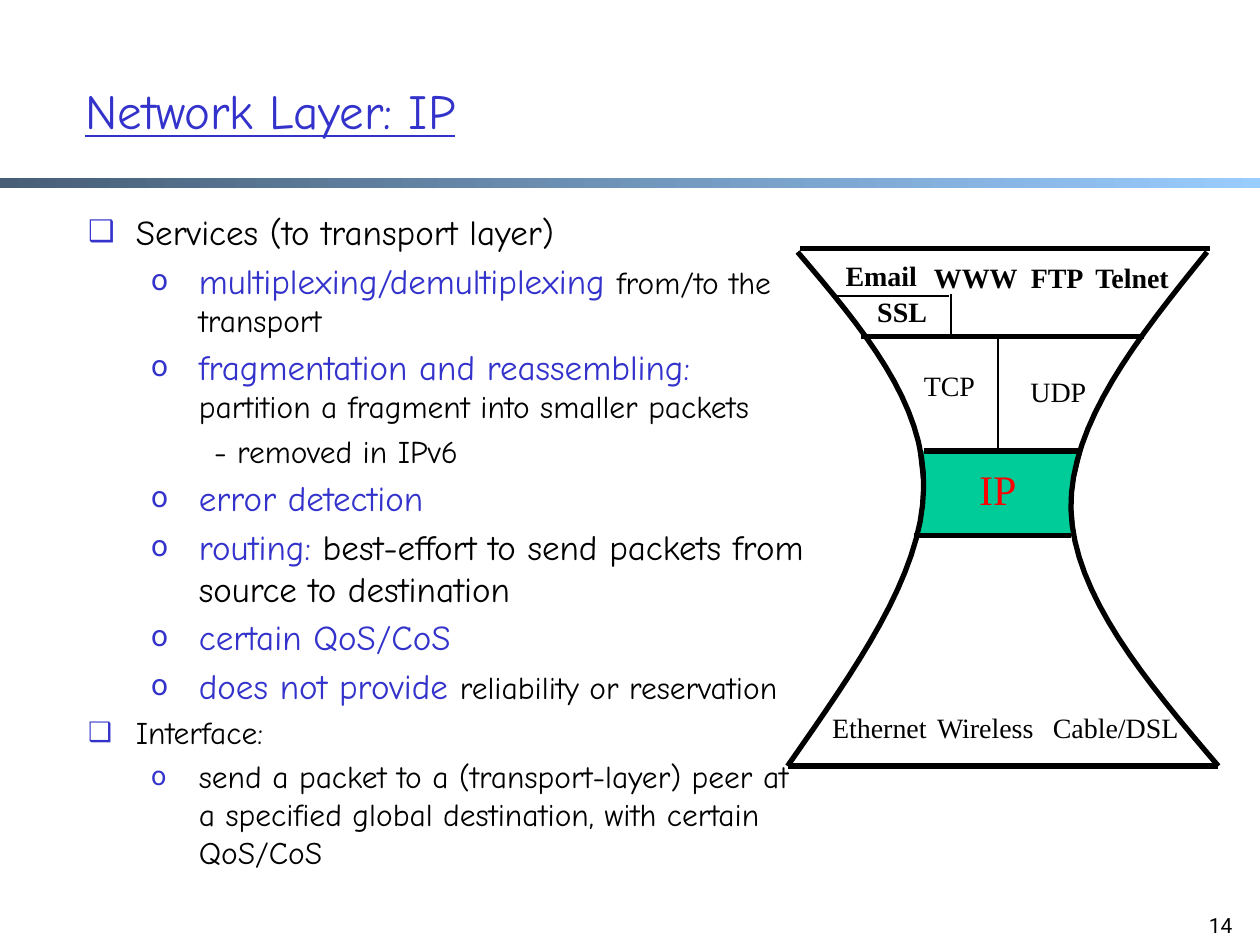
from lxml.etree import SubElement
from pptx import Presentation
from pptx.dml.color import RGBColor
from pptx.enum.shapes import MSO_CONNECTOR, MSO_SHAPE
from pptx.enum.text import MSO_ANCHOR, PP_ALIGN
from pptx.oxml.ns import qn
from pptx.util import Inches, Pt

BLACK = RGBColor(0x00, 0x00, 0x00)
BLUE = RGBColor(0x33, 0x33, 0xCC)
RED = RGBColor(0xFF, 0x00, 0x00)
GREEN = RGBColor(0x00, 0xCC, 0x99)
BAR_START = RGBColor(0x47, 0x5E, 0x76)
BAR_END = RGBColor(0x99, 0xCC, 0xFF)
BODY_FONT = "Comic Neue"
NUMBER_FONT = "Roboto"
DIAGRAM_FONT = "Times New Roman"
CURVE_STEPS = 16

INDENTS = [(0.38, -0.38), (0.88, -0.38), (1, 0)]
BULLETS = ["❑", "o", None]

OUTLINE = [
    (0, [("Services (to transport layer)", 20, BLACK)]),
    (1, [("multiplexing/demultiplexing ", 20, BLUE), ("from/to the transport", 18, BLACK)]),
    (1, [("fragmentation and reassembling: ", 20, BLUE),
         ("partition a fragment into smaller packets", 18, BLACK)]),
    (2, [("- removed in IPv6", 18, BLACK)]),
    (1, [("error detection", 20, BLUE)]),
    (1, [("routing: ", 20, BLUE),
         ("best-effort to send packets from source to destination", 20, BLACK)]),
    (1, [("certain QoS/CoS", 20, BLUE)]),
    (1, [("does not provide ", 20, BLUE), ("reliability or reservation", 18, BLACK)]),
    (0, [("Interface:", 18, BLACK)]),
    (1, [("send a packet to a (transport-layer) peer at a specified global destination, "
          "with certain QoS/CoS", 18, BLACK)]),
]

IP_BAND = [(7.29, 3.58), (7.33, 3.92), (7.29, 4.25), (8.53, 4.25), (8.5, 3.92), (8.58, 3.59)]
LEFT_CURVE = [(6.33, 2), (6.84, 2.6), (7.35, 3.2), (7.33, 3.88),
              (7.32, 4.57), (6.78, 5.32), (6.25, 6.08)]
RIGHT_CURVE = [(9.58, 2), (9.03, 2.68), (8.49, 3.36), (8.5, 4.04),
               (8.52, 4.72), (9.09, 5.4), (9.67, 6.08)]

LINES = [
    (7.33, 3.58, 8.58, 3.58, 3),
    (7.25, 4.25, 8.5, 4.25, 3),
    (6.25, 6.08, 9.67, 6.08, 3),
    (6.83, 2.67, 9.08, 2.67, 3),
    (7.92, 2.67, 7.92, 3.58, 1),
    (7.55, 2.33, 7.55, 2.68, 1),
    (6.35, 1.97, 9.6, 1.97, 3),
    (6.64, 2.35, 7.53, 2.35, 1),
]

LABELS = [
    ("Ethernet", 6.5, 5.59, 0.96, False),
    ("Cable/DSL", 8.25, 5.59, 1.21, False),
    ("Wireless", 7.33, 5.59, 0.98, False),
    ("TCP", 7.23, 2.88, 0.61, False),
    ("UDP", 8.08, 2.92, 0.64, False),
    ("SSL", 6.86, 2.29, 0.6, True),
    ("Telnet", 8.58, 2.02, 0.81, True),
    ("Email", 6.61, 2, 0.77, True),
    ("FTP", 8.08, 2.02, 0.62, True),
    ("WWW", 7.31, 2.02, 0.87, True),
]


def add_text_box(slide, left, top, width, height, wrap=True):
    box = slide.shapes.add_textbox(Inches(left), Inches(top), Inches(width), Inches(height))
    box.text_frame.word_wrap = wrap
    return box.text_frame


def style_font(font, name, size, color):
    font.name = name
    font.size = Pt(size)
    font.color.rgb = color


def add_label(slide, text, left, top, width, height=0.37, size=16, color=BLACK, bold=False):
    paragraph = add_text_box(slide, left, top, width, height, wrap=False).paragraphs[0]
    paragraph.text = text
    paragraph.alignment = PP_ALIGN.CENTER
    style_font(paragraph.font, DIAGRAM_FONT, size, color)
    paragraph.font.bold = bold


def add_title(slide):
    frame = add_text_box(slide, 0.58, 0.25, 8.5, 1.25)
    frame.vertical_anchor = MSO_ANCHOR.MIDDLE
    paragraph = frame.paragraphs[0]
    paragraph.text = "Network Layer: IP"
    style_font(paragraph.font, BODY_FONT, 28, BLUE)
    paragraph.font.underline = True


def add_slide_number(slide):
    paragraph = add_text_box(slide, 9.38, 7.19, 0.5, 0.5).paragraphs[0]
    paragraph.text = "14"
    paragraph.alignment = PP_ALIGN.RIGHT
    style_font(paragraph.font, NUMBER_FONT, 12, BLACK)


def format_level(paragraph, level):
    paragraph.level = level
    paragraph.space_before = Pt(3.8)
    properties = paragraph._p.get_or_add_pPr()
    margin, indent = INDENTS[level]
    properties.set("marL", str(Inches(margin)))
    properties.set("indent", str(Inches(indent)))
    if BULLETS[level] is None:
        SubElement(properties, qn("a:buNone"))
        return
    SubElement(SubElement(properties, qn("a:buClr")), qn("a:srgbClr"), val=str(BLUE))
    SubElement(properties, qn("a:buSzPct"), val="85000")
    SubElement(properties, qn("a:buFont"), typeface=NUMBER_FONT)
    SubElement(properties, qn("a:buChar"), char=BULLETS[level])


def add_outline(slide):
    frame = add_text_box(slide, 0.6, 1.62, 5.92, 5.08)
    for index, (level, runs) in enumerate(OUTLINE):
        paragraph = frame.add_paragraph() if index else frame.paragraphs[0]
        format_level(paragraph, level)
        for text, size, color in runs:
            run = paragraph.add_run()
            run.text = text
            style_font(run.font, BODY_FONT, size, color)


def add_header_bar(slide):
    bar = slide.shapes.add_shape(MSO_SHAPE.RECTANGLE, 0, Inches(1.41), Inches(10), Inches(0.08))
    bar.shadow.inherit = False
    bar.line.fill.background()
    bar.fill.gradient()
    bar.fill.gradient_angle = 0
    for stop, position, color in zip(bar.fill.gradient_stops, (0, 1), (BAR_START, BAR_END)):
        stop.position = position
        stop.color.rgb = color


def add_line(slide, x1, y1, x2, y2, weight):
    line = slide.shapes.add_connector(
        MSO_CONNECTOR.STRAIGHT, Inches(x1), Inches(y1), Inches(x2), Inches(y2))
    line.line.color.rgb = BLACK
    line.line.width = Pt(weight)
    SubElement(line._element.spPr, qn("a:effectLst"))


def add_open_outline(slide, points, weight, fill=None):
    vertices = [(Inches(x), Inches(y)) for x, y in points]
    builder = slide.shapes.build_freeform(*vertices[0])
    builder.add_line_segments(vertices[1:], close=False)
    shape = builder.convert_to_shape()
    shape.shadow.inherit = False
    shape.line.color.rgb = BLACK
    shape.line.width = Pt(weight)
    if fill is None:
        shape.fill.background()
    else:
        shape.fill.solid()
        shape.fill.fore_color.rgb = fill


def bezier_points(controls):
    points = [controls[0]]
    for start in range(0, len(controls) - 1, 3):
        segment = controls[start:start + 4]
        for step in range(1, CURVE_STEPS + 1):
            t = step / CURVE_STEPS
            weights = ((1 - t) ** 3, 3 * t * (1 - t) ** 2, 3 * t ** 2 * (1 - t), t ** 3)
            points.append(tuple(
                sum(weight * value for weight, value in zip(weights, axis))
                for axis in zip(*segment)))
    return points


def add_hourglass(slide):
    add_open_outline(slide, IP_BAND, 1, GREEN)
    for controls in (LEFT_CURVE, RIGHT_CURVE):
        add_open_outline(slide, bezier_points(controls), 3)
    for line in LINES:
        add_line(slide, *line)
    add_label(slide, "IP", 7.67, 3.63, 0.5, height=0.5, size=24, color=RED)
    for text, left, top, width, bold in LABELS:
        add_label(slide, text, left, top, width, bold=bold)


def main():
    presentation = Presentation()
    presentation.slide_width = Inches(10)
    presentation.slide_height = Inches(7.5)
    slide = presentation.slides.add_slide(presentation.slide_layouts[6])
    add_header_bar(slide)
    add_slide_number(slide)
    add_title(slide)
    add_outline(slide)
    add_hourglass(slide)
    presentation.save("out.pptx")


if __name__ == "__main__":
    main()
